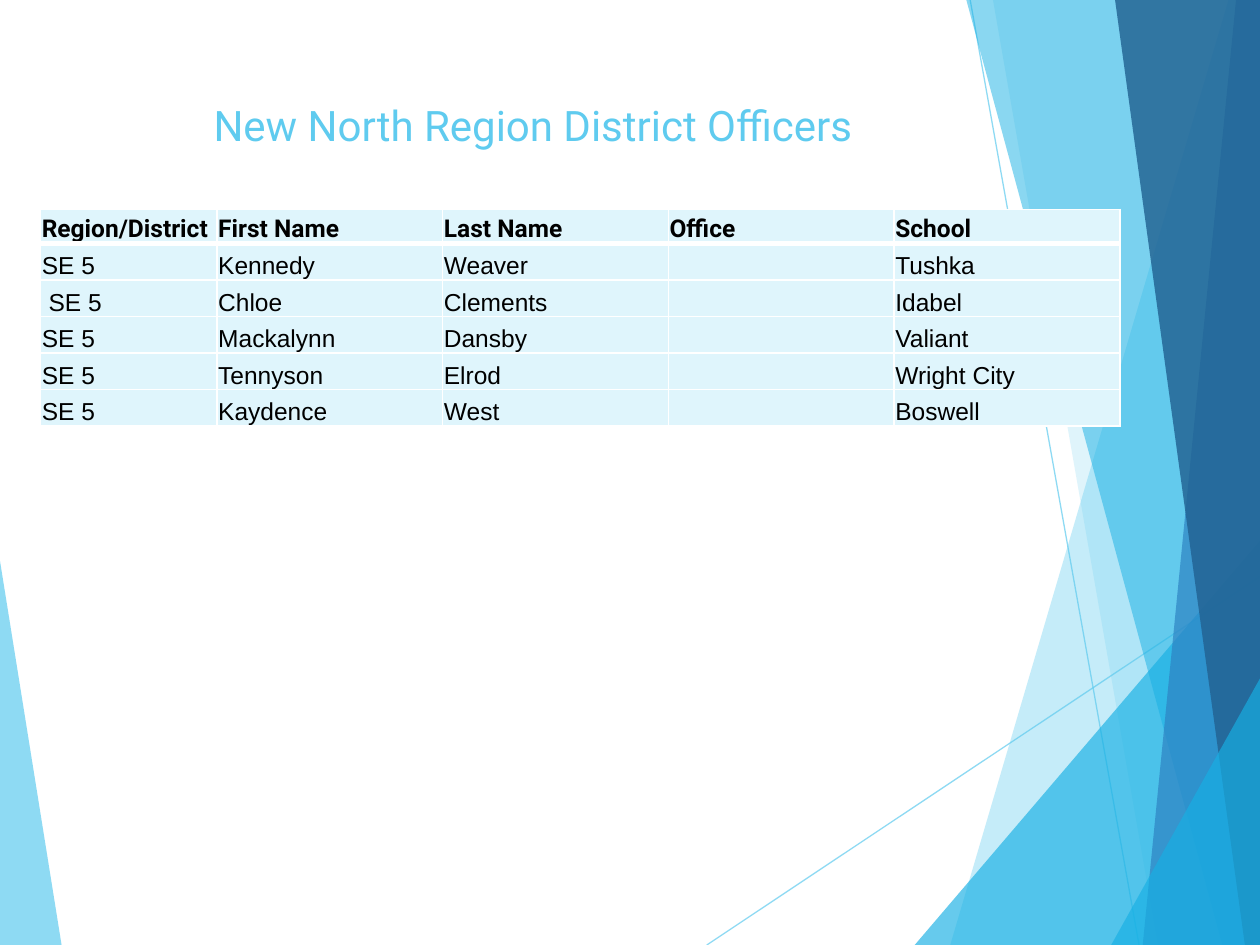
"""Build the slide of new district officers: faceted backdrop, title and table."""
from lxml.etree import SubElement
from pptx import Presentation
from pptx.dml.color import RGBColor
from pptx.enum.shapes import MSO_CONNECTOR as CONN
from pptx.enum.text import MSO_ANCHOR as ANCHOR, PP_ALIGN as ALIGN
from pptx.oxml.ns import qn
from pptx.util import Pt

SKY = RGBColor(0x5F, 0xCB, 0xEF)
CYAN = RGBColor(0x17, 0xB0, 0xE4)
BLUE = RGBColor(0x2E, 0x83, 0xC3)
NAVY = RGBColor(0x22, 0x62, 0x92)
PALE = RGBColor(0xDF, 0xF5, 0xFC)
WHITE = RGBColor(0xFF, 0xFF, 0xFF)
BLACK = RGBColor(0, 0, 0)

W, H = 720, 540

LEFT_FACET = [(-0.7, 316), (35.3, 540.5), (-0.7, H)]
RIGHT_FACETS = [
    ([(702, 0), (543, H), (721, H), (721, 0)], SKY, 36),
    ([(567.4, 0), (661.7, H), (721, H), (721, 0)], SKY, 20),
    ([(522.7, H), (W, 309), (721, H)], CYAN, 66),
    ([(552.2, 0), (698.4, H), (721, H), (721, 0)], CYAN, 50),
    ([(706.3, 0), (653, H), (721, H), (W, 0)], BLUE, 70),
    ([(637.2, 0), (711.4, H), (721, H), (W, 0)], NAVY, 82),
    ([(635, H), (721.4, 385.2), (721.4, H)], CYAN, 66),
]
RAYS = [(403.9, H, 720.7, 329), (554.4, 0, 650.9, H)]

HEADER = ["Region/District", "First Name", "Last Name", "Office", "School"]
OFFICERS = [
    ["SE 5", "Kennedy", "Weaver", "", "Tushka"],
    [" SE 5", "Chloe", "Clements", "", "Idabel"],
    ["SE 5", "Mackalynn", "Dansby", "", "Valiant"],
    ["SE 5", "Tennyson", "Elrod", "", "Wright City"],
    ["SE 5", "Kaydence", "West", "", "Boswell"],
]
COL_WIDTHS = [100.8] + [129] * 4
ROW_HEIGHT = 19.44


def write(tf, text, font="Arial", size=14, color=BLACK, bold=False, align=ALIGN.LEFT):
    """Put one formatted run in the first paragraph of a text frame."""
    p = tf.paragraphs[0]
    p.alignment = align
    r = p.add_run()
    r.text = text
    r.font.name, r.font.size, r.font.bold = font, Pt(size), bold
    r.font.color.rgb = color


def set_alpha(color_format_parent, percent):
    """Give the solid colour below an XML element an opacity."""
    clr = next(color_format_parent.iter(qn("a:srgbClr")))
    SubElement(clr, qn("a:alpha"), val=str(percent * 1000))


class Deck:
    """Hold the style and the current slide."""

    heading_font = "Roboto"

    def __init__(self):
        """Start a presentation with one title-only slide."""
        self.prs = Presentation()
        self.prs.slide_width, self.prs.slide_height = Pt(W), Pt(H)
        self.s = self.prs.slides.add_slide(self.prs.slide_layouts[5])

    def facet(self, points, color, opacity):
        """Draw a translucent polygon."""
        (x, y), *rest = [(Pt(px), Pt(py)) for px, py in points]
        builder = self.s.shapes.build_freeform(x, y)
        builder.add_line_segments(rest, close=True)
        sp = builder.convert_to_shape()
        sp.shadow.inherit = False
        sp.line.fill.background()
        sp.fill.solid()
        sp.fill.fore_color.rgb = color
        set_alpha(sp.element.spPr, opacity)

    def ray(self, x1, y1, x2, y2):
        """Draw a thin translucent line."""
        line = self.s.shapes.add_connector(CONN.STRAIGHT, Pt(x1), Pt(y1), Pt(x2), Pt(y2))
        line.line.width = Pt(0.75)
        line.line.color.rgb = SKY
        set_alpha(line.line._get_or_add_ln(), 70)
        SubElement(line._element.spPr, qn("a:effectLst"))

    def title(self, text, left, top, width, height):
        """Place and fill the title placeholder."""
        sp = self.s.shapes.title
        sp.left, sp.top, sp.width, sp.height = Pt(left), Pt(top), Pt(width), Pt(height)
        sp.text_frame.vertical_anchor = ANCHOR.TOP
        write(sp.text_frame, text, font=self.heading_font, size=24, color=SKY, align=ALIGN.CENTER)

    def border(self, cell, side, width):
        """Add a white border to one side of a cell."""
        ln = SubElement(cell._tc.get_or_add_tcPr(), qn(f"a:ln{side}"), w=str(Pt(width)))
        SubElement(SubElement(ln, qn("a:solidFill")), qn("a:srgbClr"), val=str(WHITE))

    def cell(self, cell, text, header):
        """Format and fill one table cell."""
        cell.margin_left = cell.margin_right = cell.margin_top = Pt(0.7)
        cell.margin_bottom = 0
        cell.vertical_anchor = ANCHOR.BOTTOM
        sides = {"L": 1, "R": 1, "T": 1, "B": 3} if header else {"L": 1, "R": 1, "B": 1}
        for side, width in sides.items():
            self.border(cell, side, width)
        cell.fill.solid()
        cell.fill.fore_color.rgb = PALE
        font = self.heading_font if header else "Arial"
        write(cell.text_frame, text, font=font, bold=header)

    def table(self, rows, left, top):
        """Add a table whose first row is a header."""
        frame = self.s.shapes.add_table(len(rows), len(COL_WIDTHS), Pt(left), Pt(top),
                                        Pt(sum(COL_WIDTHS)), Pt(ROW_HEIGHT * len(rows)))
        table = frame.table
        for column, width in zip(table.columns, COL_WIDTHS):
            column.width = Pt(width)
        for i, row in enumerate(rows):
            table.rows[i].height = Pt(ROW_HEIGHT)
            for j, text in enumerate(row):
                self.cell(table.cell(i, j), text, header=i == 0)


def main():
    """Build and save the slide."""
    deck = Deck()
    deck.facet(LEFT_FACET, SKY, 70)
    for ray in RAYS:
        deck.ray(*ray)
    for facet in RIGHT_FACETS:
        deck.facet(*facet)
    deck.title("New North Region District Officers", 108.7, 53.3, 391.7, 48.2)
    deck.table([HEADER] + OFFICERS, 23.2, 119.7)
    deck.prs.save("out.pptx")


if __name__ == "__main__":
    main()
